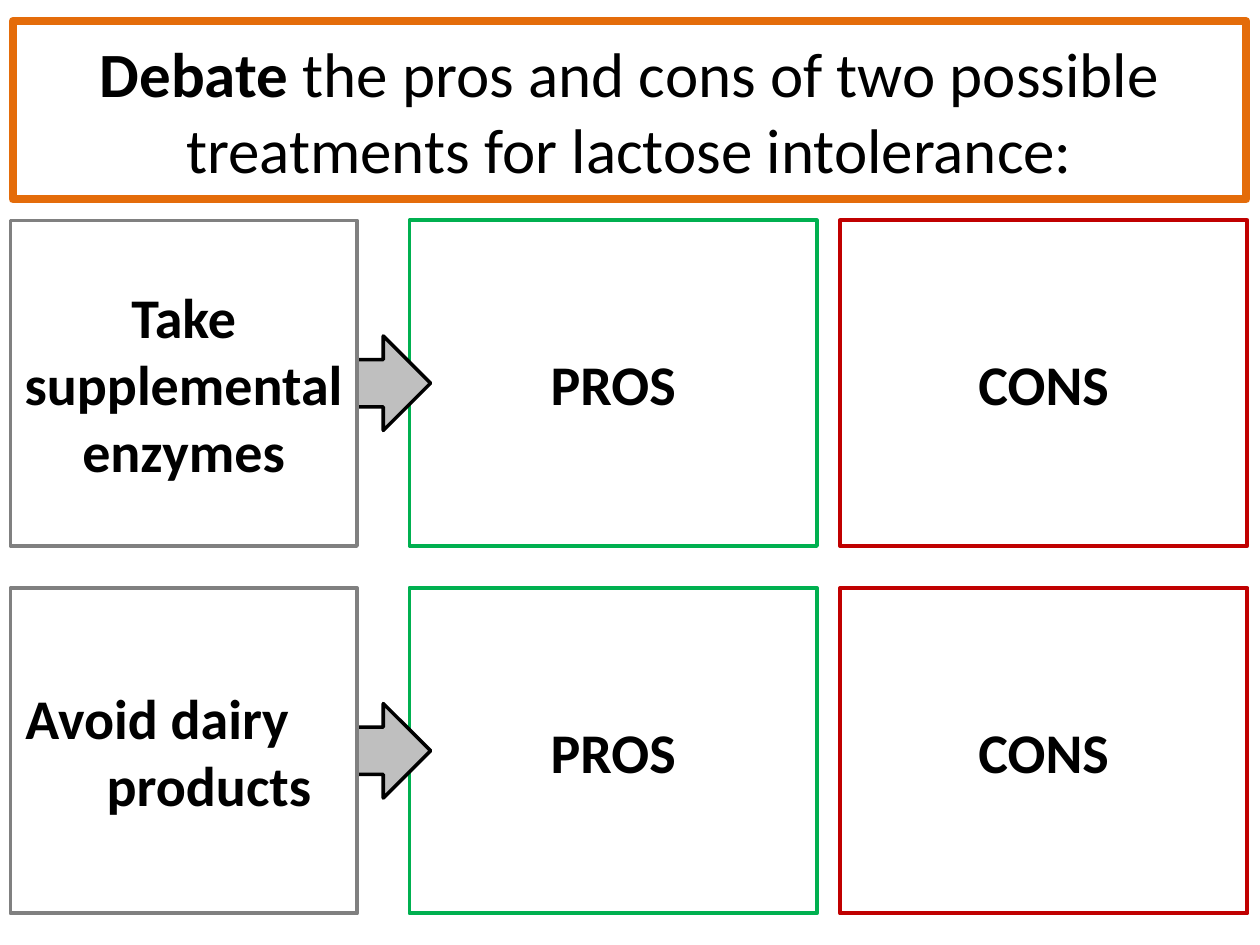
import pptx
import pptx.util
import pptx.dml.color
import pptx.enum.shapes
import pptx.enum.text

RGBColor = pptx.dml.color.RGBColor
BLACK = RGBColor(0x00, 0x00, 0x00)
WHITE = RGBColor(0xFF, 0xFF, 0xFF)
ORANGE = RGBColor(0xE4, 0x6C, 0x0A)
GREEN = RGBColor(0x00, 0xB0, 0x50)
RED = RGBColor(0xC0, 0x00, 0x00)
GREY = RGBColor(0x80, 0x80, 0x80)
LIGHT_GREY = RGBColor(0xBF, 0xBF, 0xBF)
SHAPE = pptx.enum.shapes.MSO_SHAPE

prs = pptx.Presentation()
prs.slide_width = pptx.util.Inches(10)
prs.slide_height = pptx.util.Inches(7.5)
UNIT = prs.slide_width / 120  # grid of 120 columns by 90 rows


def format_box(sp, left, top, width, height, line, weight, fill=None):
    """Place a shape on the grid and set its outline and fill."""
    sp.left, sp.top, sp.width, sp.height = (
        round(n * UNIT) for n in (left, top, width, height))
    sp.line.color.rgb = line
    sp.line.width = pptx.util.Pt(weight)
    if fill is None:
        sp.fill.background()
    else:
        sp.fill.solid()
        sp.fill.fore_color.rgb = fill


def add_text(sp, text, size=32, bold=True, before=6.4, new=False, left=0, right=0):
    """Add a run to the first paragraph, or to a new one; margins in inches."""
    tf = sp.text_frame
    tf.word_wrap = True
    tf.auto_size = pptx.enum.text.MSO_AUTO_SIZE.NONE
    tf.vertical_anchor = pptx.enum.text.MSO_ANCHOR.MIDDLE
    p = tf.add_paragraph() if new else tf.paragraphs[0]
    p.alignment = pptx.enum.text.PP_ALIGN.CENTER
    p.space_before = pptx.util.Pt(before)
    pPr = p._p.get_or_add_pPr()
    pPr.set("marL", str(pptx.util.Inches(left)))
    pPr.set("marR", str(pptx.util.Inches(right)))
    pPr.set("indent", "0")
    if pPr.find(pptx.oxml.ns.qn("a:buNone")) is None:
        pPr.append(pptx.oxml.parse_xml(
            "<a:buNone %s/>" % pptx.oxml.ns.nsdecls("a")))
    r = p.add_run()
    r.text = text
    r.font.name = "Calibri"
    r.font.size = pptx.util.Pt(size)
    r.font.bold = bold
    r.font.color.rgb = BLACK


s = prs.slides.add_slide(prs.slide_layouts[3])  # title and two bodies

# Title
title = s.shapes.title
format_box(title, 1.2, 2, 117.5, 17, ORANGE, 4.5)
add_text(title, "Debate", size=36, before=0)
add_text(title, " the pros and cons of two possible treatments for lactose intolerance:",
         size=36, bold=False, before=0)

# One row per treatment: pros and cons, arrow, then the treatment over its tail
treatments = [
    (21, [dict(text="Take supplemental enzymes")]),
    (56, [dict(text="Avoid dairy", right=0.42),
          dict(text="products", left=0.4, before=0, new=True)]),
]
for body, (top, lines) in zip(list(s.placeholders)[1:], treatments):
    for left, label, color in ((39, "PROS", GREEN), (80, "CONS", RED)):
        sp = s.shapes.add_shape(SHAPE.RECTANGLE, 0, 0, 0, 0)
        sp.shadow.inherit = False
        format_box(sp, left, top, 38.8, 31, color, 2.25, WHITE)
        add_text(sp, label)

    arrow = s.shapes.add_shape(SHAPE.RIGHT_ARROW, 0, 0, 0, 0)
    arrow.shadow.inherit = False
    format_box(arrow, 31, top + 11, 10, 9, BLACK, 2, LIGHT_GREY)

    format_box(body, 1, top, 33, 31, GREY, 2.25, WHITE)
    for line in lines:
        add_text(body, **line)
    s.shapes._spTree.append(body._element)

prs.save("out.pptx")
